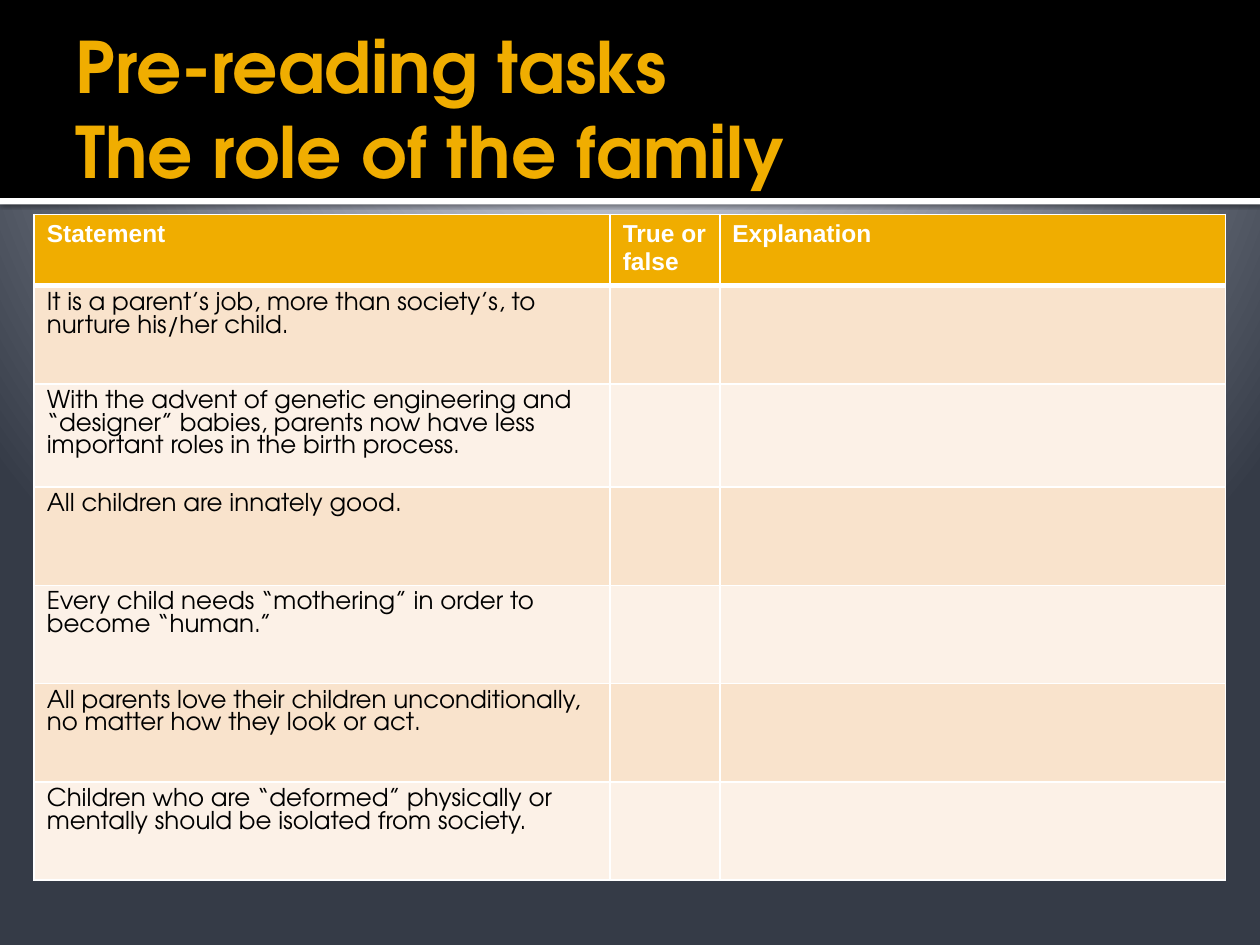
from pptx import Presentation
from pptx.dml.color import RGBColor
from pptx.enum.shapes import MSO_SHAPE as SHAPE
from pptx.enum.text import MSO_ANCHOR as ANCHOR
from pptx.oxml import parse_xml
from pptx.util import Cm, Pt

COLORS = {
    "gold": "F0AD00", "white": "FFFFFF", "black": "000000",
    "band_dark": "F9E3CC", "band_light": "FCF1E7",
    "glow": "C1C5D3", "glow_edge": "BFC4D2", "slate": "353B47",
}
TITLE_FONT = "TeX Gyre Adventor"
HEADER_FONT = "Arial"
NS = 'xmlns:a="http://schemas.openxmlformats.org/drawingml/2006/main"'

HEADERS = ["Statement", "True or false", "Explanation"]
STATEMENTS = [
    "It is a parent’s job, more than society’s, to nurture his/her child.",
    "With the advent of genetic engineering and “designer” babies, "
    "parents now have less important roles in the birth process.",
    "All children are innately good.",
    "Every child needs “mothering” in order to become “human.”",
    "All parents love their children unconditionally, "
    "no matter how they look or act.",
    "Children who are “deformed” physically or mentally "
    "should be isolated from society.",
]
COLUMN_WIDTHS = [11.61, 2.21, 10.19]
ROW_HEIGHTS = [1.4, 1.98, 2.08, 1.98, 1.98, 1.98, 1.98]


def rgb(name):
    return RGBColor.from_string(COLORS[name])


def style_paragraph(para, font, size, color, bold):
    for span in para.runs:
        span.font.name = font
        span.font.size = Pt(size)
        span.font.bold = bold
        span.font.color.rgb = rgb(color)


def paint_background(page):
    """Fill the page with a glow that spreads from above its top edge."""
    stops = [(0, "glow"), (12, "glow"), (20, "glow_edge"), (100, "slate")]
    stop_xml = "".join(
        f'<a:gs pos="{pos * 1000}"><a:srgbClr val="{COLORS[name]}"/></a:gs>'
        for pos, name in stops)
    fill = page.background.fill
    fill.solid()
    solid = page.background._cSld.bg.bgPr[0]
    solid.getparent().replace(solid, parse_xml(
        f'<a:gradFill {NS} rotWithShape="1"><a:gsLst>{stop_xml}</a:gsLst>'
        '<a:path path="circle"><a:fillToRect l="10000" t="-25000" '
        'r="10000" b="125000"/></a:path></a:gradFill>'))


def add_bar(page, left, top, width, height, color):
    bar = page.shapes.add_shape(
        SHAPE.RECTANGLE, Cm(left), Cm(top), Cm(width), Cm(height))
    bar.shadow.inherit = False
    bar.fill.solid()
    bar.fill.fore_color.rgb = rgb(color)
    bar.line.fill.background()
    return bar


def add_header(page, left, top, width, height):
    """Black band with a white rule below it and the title inside."""
    rule = add_bar(page, left, top + height, width, 0.13, "white")
    effects = rule._element.spPr.find(
        "{http://schemas.openxmlformats.org/drawingml/2006/main}effectLst")
    effects.append(parse_xml(
        f'<a:outerShdw {NS} blurRad="{Pt(2.5)}" dist="{Pt(0.8)}" '
        f'dir="5400000"><a:srgbClr val="{COLORS["black"]}">'
        '<a:alpha val="60000"/></a:srgbClr></a:outerShdw>'))
    add_bar(page, left, top, width, height, "black")

    box = page.shapes.add_textbox(
        Cm(left + 1.27), Cm(top + 0.43), Cm(width - 2.54), Cm(height - 0.51))
    frame = box.text_frame
    frame.word_wrap = True
    frame.vertical_anchor = ANCHOR.MIDDLE
    frame.margin_left = Cm(0.25)
    frame.margin_right = frame.margin_top = frame.margin_bottom = Cm(0.13)
    frame.text = "Pre-reading tasks\vThe role of the family"
    style_paragraph(frame.paragraphs[0], TITLE_FONT, 40.5, "gold", True)


def set_borders(cell, bottom):
    props = cell._tc.get_or_add_tcPr()
    widths = {"lnL": 1, "lnR": 1, "lnT": 1, "lnB": bottom}
    for index, (side, width) in enumerate(widths.items()):
        props.insert(index, parse_xml(
            f'<a:{side} {NS} w="{Pt(width)}"><a:solidFill>'
            f'<a:srgbClr val="{COLORS["white"]}"/></a:solidFill></a:{side}>'))


def fill_cell(cell, text, color, bottom=1):
    cell.fill.solid()
    cell.fill.fore_color.rgb = rgb(color)
    set_borders(cell, bottom)
    cell.text_frame.text = text
    return cell.text_frame.paragraphs[0]


def add_statement_table(page, left, top):
    table = page.shapes.add_table(
        len(ROW_HEIGHTS), len(COLUMN_WIDTHS), Cm(left), Cm(top),
        Cm(sum(COLUMN_WIDTHS)), Cm(sum(ROW_HEIGHTS))).table
    for column, width in zip(table.columns, COLUMN_WIDTHS):
        column.width = Cm(width)
    for row, height in zip(table.rows, ROW_HEIGHTS):
        row.height = Cm(height)

    for column, text in enumerate(HEADERS):
        para = fill_cell(table.cell(0, column), text, "gold", bottom=3)
        style_paragraph(para, HEADER_FONT, 14, "white", True)
    for row, statement in enumerate(STATEMENTS, start=1):
        band = "band_dark" if row % 2 else "band_light"
        for column, text in enumerate([statement, "", ""]):
            para = fill_cell(table.cell(row, column), text, band)
            para.line_spacing = Pt(13)
            style_paragraph(para, TITLE_FONT, 14, "black", False)


def main():
    deck = Presentation()
    deck.slide_width, deck.slide_height = Cm(25.4), Cm(19.05)
    page = deck.slides.add_slide(deck.slide_layouts[6])
    paint_background(page)
    add_header(page, 0, 0, 25.4, 3.99)
    add_statement_table(page, 0.69, 4.32)
    deck.save("out.pptx")


if __name__ == "__main__":
    main()
